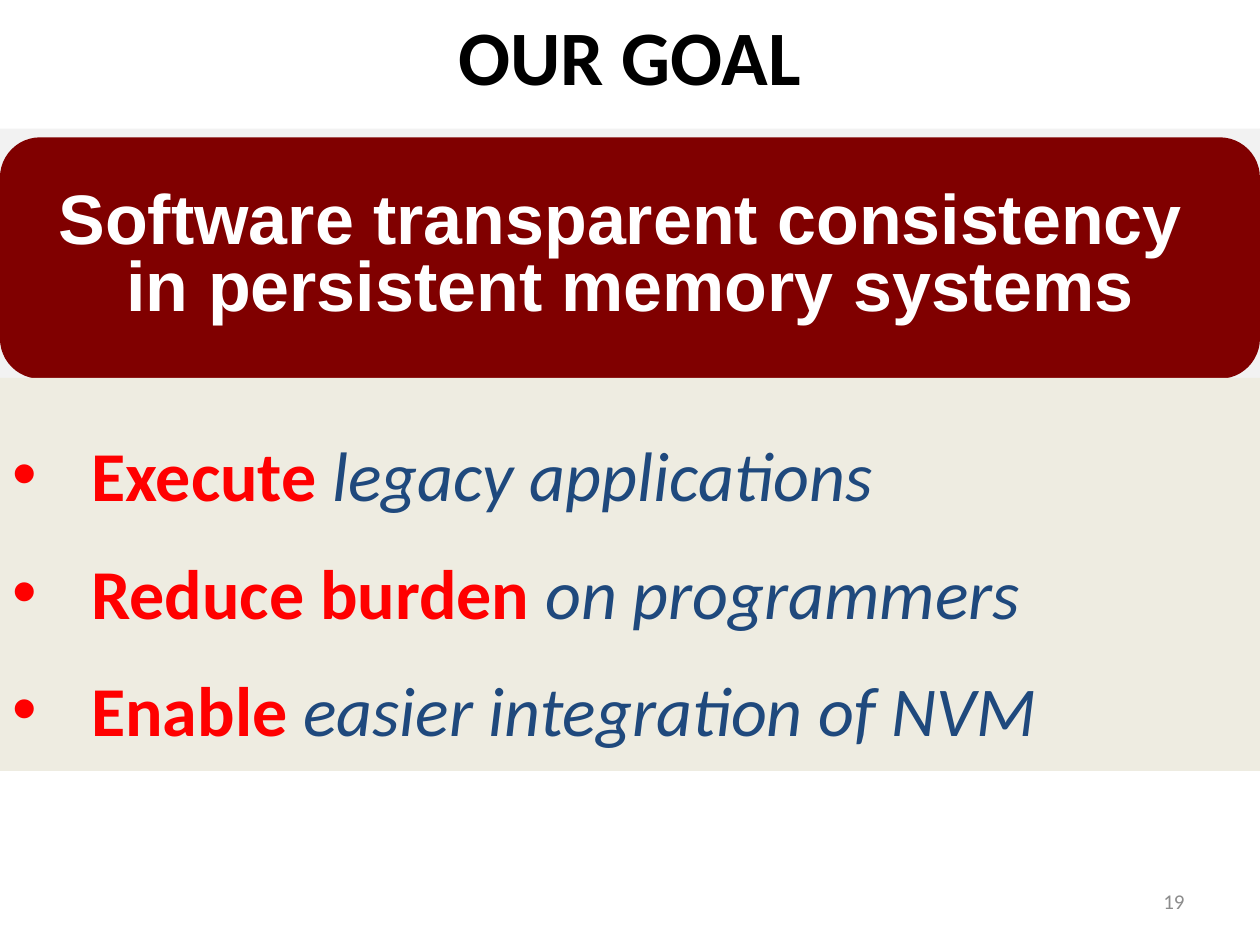
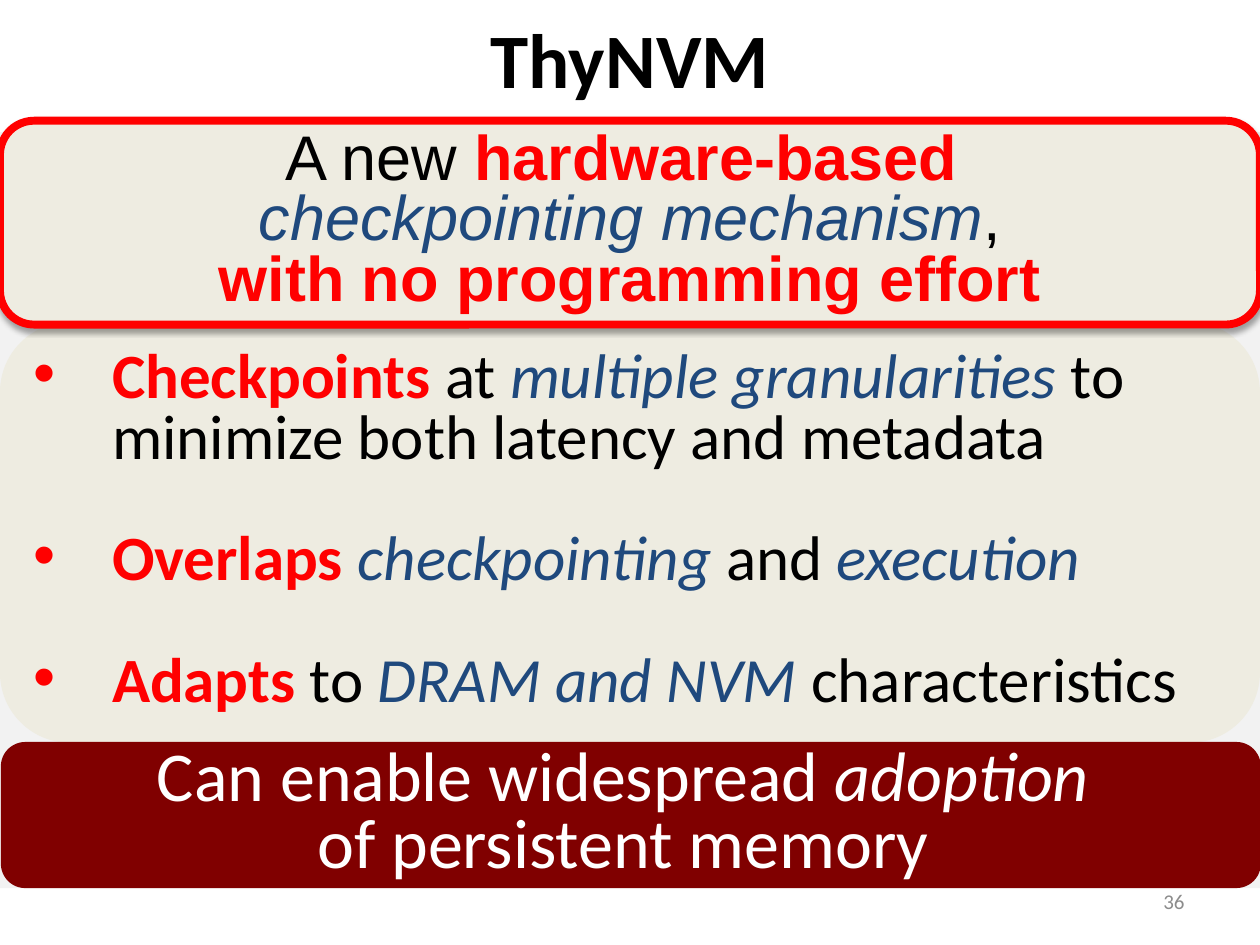
"""Build two slides on consistency in persistent memory systems."""
from dataclasses import dataclass

from lxml.etree import SubElement
from pptx import Presentation
from pptx.dml.color import RGBColor
from pptx.enum.shapes import MSO_SHAPE
from pptx.enum.text import MSO_ANCHOR, MSO_AUTO_SIZE, PP_ALIGN
from pptx.oxml.ns import qn
from pptx.util import Pt

WIDTH, HEIGHT = 720, 540
BLACK, WHITE, RED, NAVY = "000000", "FFFFFF", "FF0000", "1F497D"
MAROON, CREAM, PALE, GREY = "800000", "EEECE1", "F2F2F2", "8C8C8C"
INDENT = 45


@dataclass(frozen=True)
class Box:
    left: float
    top: float
    width: float
    height: float

    def points(self) -> tuple:
        return Pt(self.left), Pt(self.top), Pt(self.width), Pt(self.height)


@dataclass(frozen=True)
class Words:
    text: str
    color: str = BLACK
    bold: bool = False
    italic: bool = False


def key(text: str) -> Words:
    return Words(text, RED, bold=True)


def idea(text: str) -> Words:
    return Words(text, NAVY, italic=True)


def rgb(color: str) -> RGBColor:
    return RGBColor.from_string(color)


def write(shape, lines: list, *, size: float, font: str = "Calibri", align=PP_ALIGN.CENTER,
          spacing: float = 1.0, gap: float = 0, indent: float = 0, side: float = 7.2) -> None:
    frame = shape.text_frame
    frame.word_wrap = True
    frame.auto_size = MSO_AUTO_SIZE.NONE
    frame.vertical_anchor = MSO_ANCHOR.MIDDLE
    frame.margin_left = frame.margin_right = Pt(side)
    for number, line in enumerate(lines):
        paragraph = frame.add_paragraph() if number else frame.paragraphs[0]
        paragraph.alignment = align
        paragraph.line_spacing = spacing
        paragraph.space_before = Pt(gap if number else 0)
        if indent:
            properties = paragraph._p.get_or_add_pPr()
            properties.set("marL", str(Pt(indent)))
            properties.set("indent", str(-Pt(indent)))
        for words in line:
            run = paragraph.add_run()
            run.text = words.text
            run.font.name, run.font.size = font, Pt(size)
            run.font.bold, run.font.italic = words.bold, words.italic
            run.font.color.rgb = rgb(words.color)


def add_panel(slide, box: Box, fill: str, kind=MSO_SHAPE.ROUNDED_RECTANGLE):
    panel = slide.shapes.add_shape(kind, *box.points())
    panel.shadow.inherit = False
    panel.fill.solid()
    panel.fill.fore_color.rgb = rgb(fill)
    panel.line.fill.background()
    return panel


def add_outline_and_shadow(panel, color: str, width: float) -> None:
    panel.line.color.rgb = rgb(color)
    panel.line.width = Pt(width)
    effects = panel.element.spPr.find(qn("a:effectLst"))
    shadow = SubElement(effects, qn("a:outerShdw"), blurRad=str(Pt(3.1)), dist=str(Pt(1.8)),
                        dir="5400000", rotWithShape="0")
    tint = SubElement(shadow, qn("a:srgbClr"), val=BLACK)
    SubElement(tint, qn("a:alpha"), val="35000")


def start_slide(deck, title: str, title_top: float, page: str, band: Box):
    slide = deck.slides.add_slide(deck.slide_layouts[1])
    add_panel(slide, band, PALE, MSO_SHAPE.RECTANGLE)
    heading = slide.shapes.title
    heading.left, heading.top, heading.width, heading.height = Box(0, title_top, WIDTH, 90).points()
    write(heading, [[Words(title, bold=True)]], size=44)
    footer = slide.shapes.add_textbox(*Box(516, 500.5, 168, 28.75).points())
    write(footer, [[Words(page, GREY)]], size=12, align=PP_ALIGN.RIGHT)
    return slide


def add_list(slide, box: Box, kind, lines: list, **style) -> None:
    add_panel(slide, box, CREAM, kind)
    body = slide.placeholders[1]
    body.left, body.top, body.width, body.height = box.points()
    slide.shapes.element.append(body.element)
    write(body, lines, align=PP_ALIGN.LEFT, indent=INDENT, **style)


def build_goal(deck) -> None:
    slide = start_slide(deck, "OUR GOAL", -13.5, "19", Box(0, 73.5, WIDTH, 348.5))
    goal = add_panel(slide, Box(0, 78.5, WIDTH, 138), MAROON)
    write(goal, [[Words("Software transparent consistency ", WHITE, bold=True)],
                 [Words("in persistent memory systems", WHITE, bold=True)]],
          size=40, font="Arial", spacing=0.8)
    add_list(slide, Box(0, 216, WIDTH, 224.5), MSO_SHAPE.RECTANGLE,
             [[key("Execute "), idea("legacy applications")],
              [key("Reduce burden "), idea("on programmers")],
              [key("Enable "), idea("easier integration of NVM")]],
             size=40, spacing=1.4)


def build_summary(deck) -> None:
    slide = start_slide(deck, "ThyNVM", -12, "36", Box(0, 75.5, WIDTH, 432))
    add_list(slide, Box(0, 184, WIDTH, 240.5), MSO_SHAPE.ROUNDED_RECTANGLE,
             [[key("Checkpoints "), Words("at "), idea("multiple granularities "),
               Words("to minimize both latency and metadata")],
              [key("Overlaps "), idea("checkpointing"), Words(" and "), idea("execution")],
              [key("Adapts"), Words(" to "), idea("DRAM and NVM "), Words("characteristics")]],
             size=36, spacing=0.8, gap=35, side=19)
    outcome = add_panel(slide, Box(0.5, 424, WIDTH, 83.5), MAROON)
    write(outcome, [[Words("Can enable widespread ", WHITE), Words("adoption ", WHITE, italic=True)],
                    [Words("of persistent memory ", WHITE)]], size=40, spacing=0.8)
    mechanism = add_panel(slide, Box(0, 69, WIDTH, 116.5), CREAM)
    add_outline_and_shadow(mechanism, RED, 4.5)
    write(mechanism, [[Words("A new "), key("hardware-based ")],
                      [idea("checkpointing mechanism"), Words(",")],
                      [key("with no programming effort")]],
          size=36, font="Arial", spacing=0.8)


def main() -> None:
    deck = Presentation()
    deck.slide_width, deck.slide_height = Pt(WIDTH), Pt(HEIGHT)
    build_goal(deck)
    build_summary(deck)
    deck.save("out.pptx")


if __name__ == "__main__":
    main()
